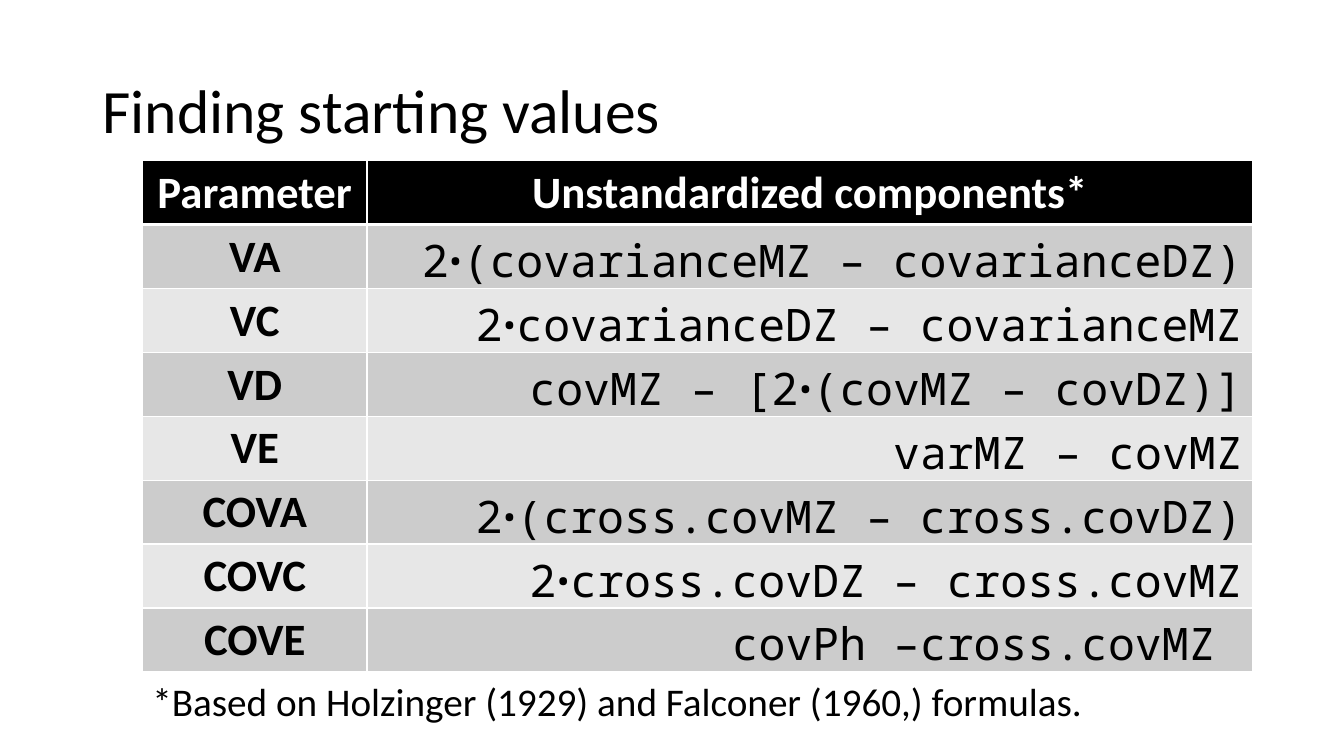
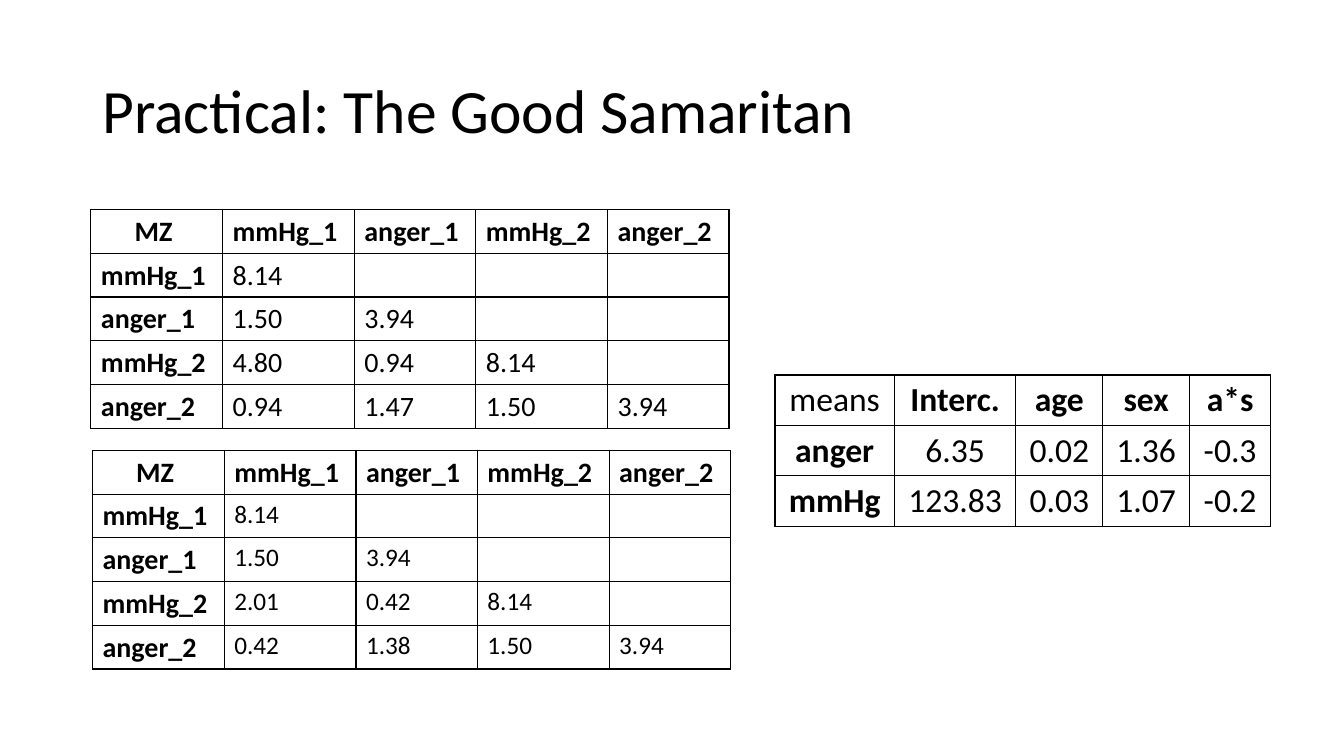
"""Build two slides on starting values for a bivariate twin model."""
from lxml import etree
from pptx import Presentation
from pptx import util as u
from pptx.dml import color
from pptx.enum import text
from pptx.oxml import ns

BLACK, WHITE, DARK_BAND, LIGHT_BAND = "000000", "FFFFFF", "CCCCCC", "E7E7E7"
LEFT, CENTER, RIGHT = text.PP_ALIGN.LEFT, text.PP_ALIGN.CENTER, text.PP_ALIGN.RIGHT
BODY, CODE, DOT = "Calibri", "Noto Sans Mono", "ꞏ"
EDGES = ("a:lnL", "a:lnR", "a:lnT", "a:lnB")


def write(frame, words, size, name=BODY, bold=False, ink=BLACK, align=LEFT):
    paragraph = frame.paragraphs[0]
    paragraph.alignment = align
    before, dot, after = words.partition(DOT)
    for part, face in ((before, name), (dot, "Arial"), (after, name)):
        if part:
            run = paragraph.add_run()
            run.text = part
            for attribute, value in {"name": face, "size": u.Pt(size), "bold": bold}.items():
                setattr(run.font, attribute, value)
            run.font.color.rgb = color.RGBColor.from_string(ink)
    return paragraph


def add_grid(slide, left, top, widths, row_height, rows, style):
    shape = slide.shapes.add_table(len(rows), len(widths), u.Cm(left), u.Cm(top),
                                   u.Cm(sum(widths)), u.Cm(row_height * len(rows)))
    table = shape.table
    for column, width in zip(table.columns, widths):
        column.width = u.Cm(width)
    for r, row in enumerate(rows):
        table.rows[r].height = u.Cm(row_height)
        for c, words in enumerate(row):
            cell = table.cell(r, c)
            look = style(r, c)
            fill, line = look.pop("fill", None), look.pop("line", BLACK)
            properties = cell._tc.get_or_add_tcPr()
            for edge in EDGES:
                thick = line == WHITE and (r, edge) in ((0, "a:lnB"), (1, "a:lnT"))
                border = etree.SubElement(properties, ns.qn(edge), w=str(u.Pt(3 if thick else 0.96)))
                solid = etree.SubElement(border, ns.qn("a:solidFill"))
                etree.SubElement(solid, ns.qn("a:srgbClr"), val=line)
            if fill:
                cell.fill.solid()
                cell.fill.fore_color.rgb = color.RGBColor.from_string(fill)
            else:
                cell.fill.background()
            write(cell.text_frame, words, **look)


presentation = Presentation()
presentation.slide_width, presentation.slide_height = u.Cm(33.87), u.Cm(19.05)

slides = []
for title in ("Finding starting values", "Practical: The Good Samaritan"):
    slide = presentation.slides.add_slide(presentation.slide_layouts[6])
    frame = slide.shapes.add_textbox(u.Cm(2.33), u.Cm(1.01), u.Cm(29.21), u.Cm(3.68)).text_frame
    frame.word_wrap = True
    frame.vertical_anchor = text.MSO_ANCHOR.MIDDLE
    write(frame, title, 44).line_spacing = 0.9
    slides.append(slide)
formula_slide, practical_slide = slides

formulas = [
    ("Parameter", "Unstandardized components*"),
    ("VA", "2ꞏ(covarianceMZ – covarianceDZ)"),
    ("VC", "2ꞏcovarianceDZ – covarianceMZ"),
    ("VD", "covMZ – [2ꞏ(covMZ – covDZ)]"),
    ("VE", "varMZ – covMZ"),
    ("COVA", "2ꞏ(cross.covMZ – cross.covDZ)"),
    ("COVC", "2ꞏcross.covDZ – cross.covMZ"),
    ("COVE", "covPh –cross.covMZ "),
]


def formula_style(r, c):
    if r == 0:
        return {"size": 32, "bold": True, "ink": WHITE, "align": CENTER, "fill": BLACK, "line": WHITE}
    look = {"size": 32, "fill": DARK_BAND if r % 2 else LIGHT_BAND, "line": WHITE}
    return look | ({"name": CODE, "align": RIGHT} if c else {"bold": True, "align": CENTER})


add_grid(formula_slide, 3.59, 4.05, (5.66, 22.33), 1.61, formulas, formula_style)
footnote = formula_slide.shapes.add_textbox(u.Cm(3.59), u.Cm(16.94), u.Cm(26.67), u.Cm(1.45)).text_frame
footnote.word_wrap = True
write(footnote, "*Based on Holzinger (1929) and Falconer (1960,) formulas.", 28)

variables = ("mmHg_1", "anger_1", "mmHg_2", "anger_2")
covariances = [
    (2.29, 5.28, 20, ("8.14", "1.50 3.94", "4.80 0.94 8.14", "0.94 1.47 1.50 3.94")),
    (2.33, 11.35, 18, ("8.14", "1.50 3.94", "2.01 0.42 8.14", "0.42 1.38 1.50 3.94")),
]
for left, top, value_size, triangle in covariances:
    rows = [("MZ ", *variables)]
    for variable, values in zip(variables, triangle):
        numbers = values.split()
        rows.append((variable, *numbers, *[""] * (len(variables) - len(numbers))))
    add_grid(practical_slide, left, top, (3.32, 3.32, 3.06, 3.32, 3.06), 1.1, rows,
             lambda r, c: {"size": value_size if r and c else 20, "bold": not (r and c),
                           "align": LEFT if r or c else CENTER})

means = [
    ("means", "Interc.", "age", "sex", "a*s"),
    ("anger", "6.35", "0.02", "1.36", "-0.3"),
    ("mmHg", "123.83", "0.03", "1.07", "-0.2"),
]
add_grid(practical_slide, 19.53, 9.45, (3.01, 3.06, 2.19, 2.19, 2.04), 1.27, means,
         lambda r, c: {"size": 24, "bold": (r == 0) != (c == 0), "align": CENTER})

presentation.save("out.pptx")
